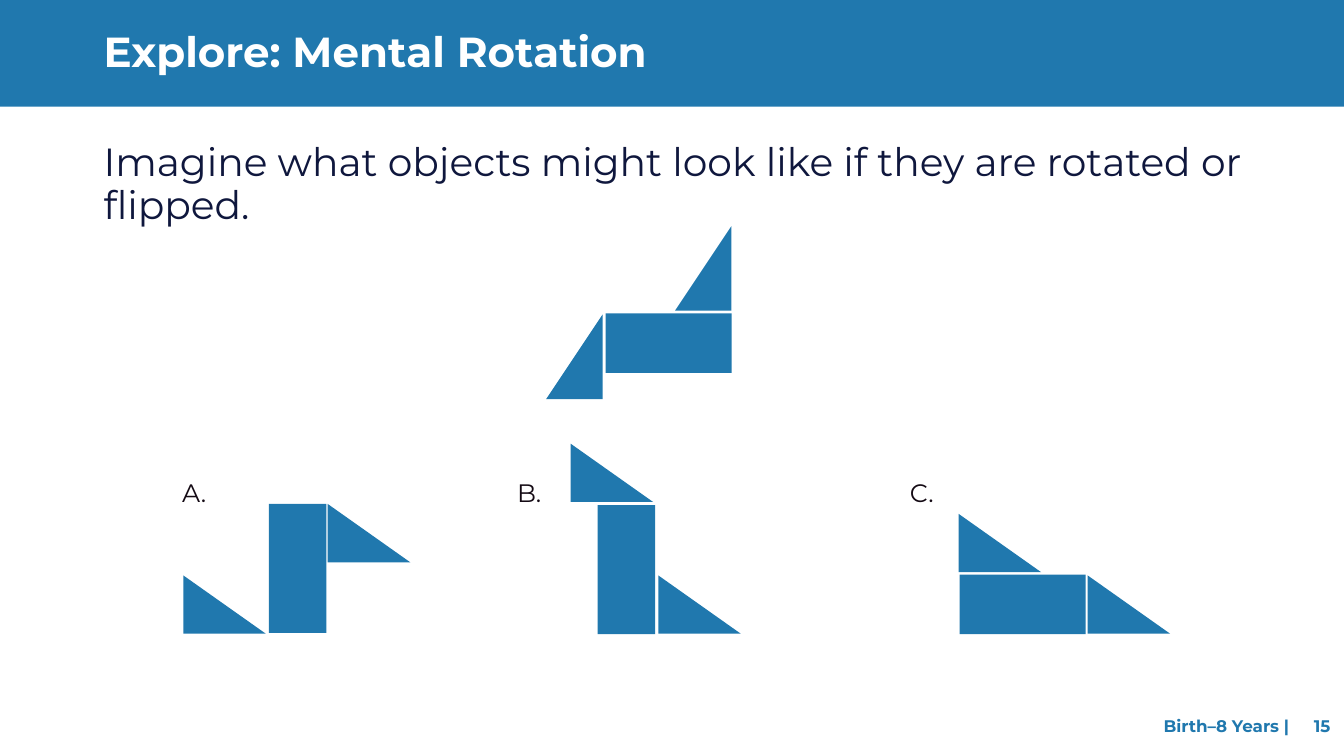
from pptx import Presentation
from pptx.dml.color import RGBColor
from pptx.enum.shapes import MSO_SHAPE
from pptx.enum.text import MSO_ANCHOR, PP_ALIGN
from pptx.util import Cm, Pt

BLUE, NAVY, INK, WHITE = "2078AE", "0F173D", "140A14", "FFFFFF"
TRI, RECT = MSO_SHAPE.RIGHT_TRIANGLE, MSO_SHAPE.RECTANGLE
WIDE, HIGH = 33.87, 19.05

WEDGE = (TRI, 2.08, 1.47, 0)
SAIL = (TRI, 2.13, 1.42, 270)
POST = (RECT, 1.45, 3.25, 0)
BEAM = (RECT, 1.5, 3.18, 90)

MODEL = [(SAIL, 0, 2.23), (BEAM, 2.69, 1.01), (SAIL, 3.25, 0)]
CHOICES = [
    ("A.", 4.34, [(WEDGE, 3.92, 0.79), (POST, 2.44, 0.79), (WEDGE, 0.28, 2.59)]),
    ("B.", 12.78, [(POST, 2.28, 0.82), (WEDGE, 3.81, 2.59), (WEDGE, 1.6, -0.73)]),
    ("C.", 22.68, [(BEAM, 2.34, 1.73), (WEDGE, 4.73, 2.59), (WEDGE, 1.48, 1.04)]),
]


def color(code):
    """Turn a hex string into a colour."""
    return RGBColor.from_string(code)


def block(shapes, kind, box, turn=0):
    """Add a plain blue shape in a box given in centimetres."""
    shape = shapes.add_shape(kind, *map(Cm, box))
    shape.rotation = turn
    shape.shadow.inherit = False
    shape.fill.solid()
    shape.fill.fore_color.rgb = color(BLUE)
    shape.line.fill.background()


def label(slide, words, box, size, tint, bold=False, align=PP_ALIGN.LEFT,
          anchor=MSO_ANCHOR.TOP, space=1.0):
    """Add one paragraph of text in a box given in centimetres."""
    frame = slide.shapes.add_textbox(*map(Cm, box)).text_frame
    frame.word_wrap = True
    frame.vertical_anchor = anchor
    para = frame.paragraphs[0]
    para.text = words
    para.alignment = align
    para.line_spacing = space
    font = para.font
    font.name, font.size, font.bold = "Montserrat", Pt(size), bold
    font.color.rgb = color(tint)


def header(slide, left, top, width, height):
    """Draw the title band."""
    block(slide.shapes, RECT, (left, top, width, height))
    label(slide, "Explore: Mental Rotation",
          (left + 2.36, top + 0.66, width - 3.77, 1.42), 30, WHITE,
          bold=True, anchor=MSO_ANCHOR.MIDDLE, space=0.9)


def figure(slide, left, top, parts):
    """Group the pieces of one figure around its origin."""
    group = slide.shapes.add_group_shape()
    for (kind, width, height, turn), x, y in parts:
        block(group.shapes, kind, (left + x, top + y, width, height), turn)


def choice(slide, left, top, name, parts):
    """Draw one lettered answer with its figure."""
    label(slide, name, (left, top, 1.45, 1.02), 18, INK)
    figure(slide, left, top, parts)


def footer(slide, left, top, width, height):
    """Write the footer text and the page number, set to the right."""
    page = 1.04
    split = left + width - page
    for words, x, span in (("Birth–8 Years |", left, width - page),
                           ("15", split, page)):
        label(slide, words, (x, top, span, height), 12, BLUE, bold=True,
              align=PP_ALIGN.RIGHT, anchor=MSO_ANCHOR.MIDDLE)


def main():
    """Build the slide and save it."""
    deck = Presentation()
    deck.slide_width, deck.slide_height = Cm(WIDE), Cm(HIGH)
    slide = deck.slides.add_slide(deck.slide_layouts[6])
    footer(slide, 24.1, 17.78, 9.68, 1.02)
    header(slide, 0, 0, WIDE, 2.69)
    label(slide, "Imagine what objects might look like if they are rotated or flipped.",
          (2.36, 3.48, 30.1, 12.09), 28, NAVY, space=0.9)
    figure(slide, 13.41, 6.05, MODEL)
    for name, left, parts in CHOICES:
        choice(slide, left, 11.91, name, parts)
    deck.save("out.pptx")


if __name__ == "__main__":
    main()
